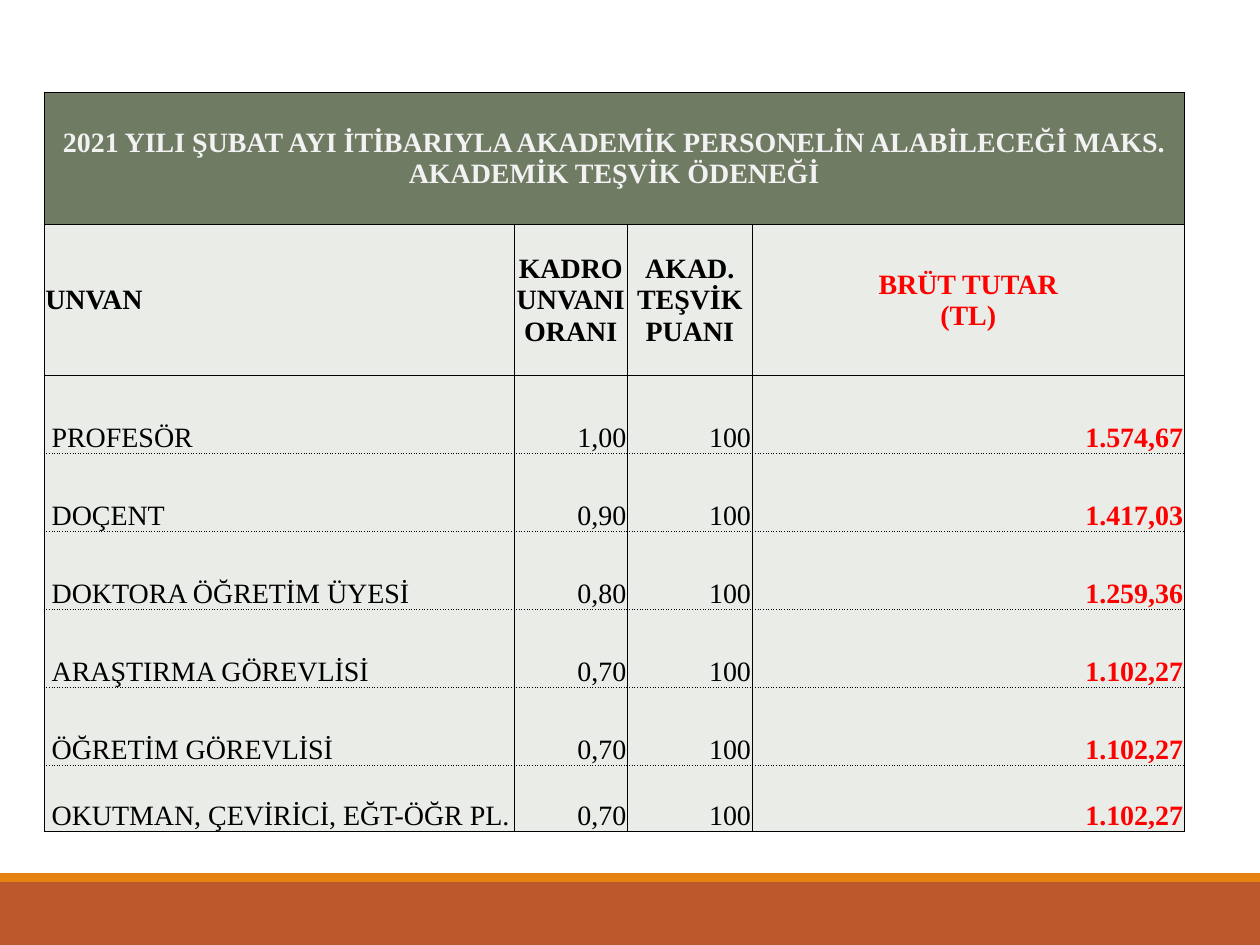
from lxml.etree import SubElement
from pptx import Presentation
from pptx.dml.color import RGBColor
from pptx.enum.shapes import MSO_SHAPE
from pptx.enum.text import MSO_ANCHOR, PP_ALIGN
from pptx.oxml.ns import qn
from pptx.util import Inches, Pt

BLACK, RED, LIGHT, GREEN = "000000", "FF0000", "EAECE7", "6F7B63"
TITLE = ("2021 YILI ŞUBAT AYI İTİBARIYLA AKADEMİK PERSONELİN "
         "ALABİLECEĞİ MAKS. AKADEMİK TEŞVİK ÖDENEĞİ")
HEADINGS = ["UNVAN", "KADRO UNVANI ORANI", "AKAD. TEŞVİK PUANI", "BRÜT TUTAR\n(TL)"]
ALLOWANCES = [
    ("PROFESÖR", "1,00", "100", "1.574,67"),
    ("DOÇENT", "0,90", "100", "1.417,03"),
    ("DOKTORA ÖĞRETİM ÜYESİ", "0,80", "100", "1.259,36"),
    ("ARAŞTIRMA GÖREVLİSİ", "0,70", "100", "1.102,27"),
    ("ÖĞRETİM GÖREVLİSİ", "0,70", "100", "1.102,27"),
    ("OKUTMAN, ÇEVİRİCİ, EĞT-ÖĞR PL.", "0,70", "100", "1.102,27"),
]
COLUMN_WIDTHS = [3.73, 0.9, 0.99, 3.43]
ROW_HEIGHTS = [1.05, 1.2] + [0.62] * 5 + [0.52]


def paint(fill, color):
    fill.solid()
    fill.fore_color.rgb = RGBColor.from_string(color)


def set_borders(cell, top="solid", bottom="solid"):
    """Draw thin black edges; top and bottom name their dash style."""
    properties = cell._tc.get_or_add_tcPr()
    edges = [("a:lnL", "solid"), ("a:lnR", "solid"), ("a:lnT", top), ("a:lnB", bottom)]
    for position, (edge, dash) in enumerate(edges):
        line = properties.makeelement(qn(edge), {"w": str(Pt(0.5))})
        properties.insert(position, line)
        ink = SubElement(line, qn("a:solidFill"))
        SubElement(ink, qn("a:srgbClr"), val=BLACK)
        SubElement(line, qn("a:prstDash"), val=dash)


def write_cell(cell, text, align, color=BLACK, bold=True, fill=LIGHT,
               anchor=MSO_ANCHOR.MIDDLE, indent=0.01):
    paint(cell.fill, fill)
    cell.vertical_anchor = anchor
    cell.margin_left = Inches(indent)
    cell.margin_top = cell.margin_right = Inches(0.01)
    cell.margin_bottom = 0
    paragraph = cell.text_frame.paragraphs[0]
    paragraph.alignment = align
    for number, part in enumerate(text.split("\n")):
        if number:
            paragraph.add_line_break()
        run = paragraph.add_run()
        run.text = part
        run.font.name = "Times New Roman"
        run.font.size = Pt(16)
        run.font.bold = bold
        run.font.color.rgb = RGBColor.from_string(color)


def add_footer_bands(slide, left, top, width, height):
    edge = 0.07
    for band_top, band_height, color in [(top + edge, height - edge, "BD582C"),
                                         (top, edge, "E48312")]:
        band = slide.shapes.add_shape(MSO_SHAPE.RECTANGLE, Inches(left), Inches(band_top),
                                      Inches(width), Inches(band_height))
        band.shadow.inherit = False
        paint(band.fill, color)
        band.line.fill.background()


def add_allowance_table(slide, left, top):
    table = slide.shapes.add_table(
        len(ROW_HEIGHTS), len(COLUMN_WIDTHS), Inches(left), Inches(top),
        Inches(sum(COLUMN_WIDTHS)), Inches(sum(ROW_HEIGHTS))).table
    table.horz_banding = False
    for column, width in zip(table.columns, COLUMN_WIDTHS):
        column.width = Inches(width)
    for row, height in zip(table.rows, ROW_HEIGHTS):
        row.height = Inches(height)

    title = table.cell(0, 0)
    title.merge(table.cell(0, len(COLUMN_WIDTHS) - 1))
    write_cell(title, TITLE, PP_ALIGN.CENTER, "F2F2F2", fill=GREEN)
    for cell in table.rows[0].cells:
        set_borders(cell)

    amount = len(HEADINGS) - 1
    for column, heading in enumerate(HEADINGS):
        cell = table.cell(1, column)
        write_cell(cell, heading, PP_ALIGN.CENTER if column else PP_ALIGN.LEFT,
                   RED if column == amount else BLACK)
        set_borders(cell)

    last = len(ALLOWANCES) - 1
    for row, allowance in enumerate(ALLOWANCES):
        for column, value in enumerate(allowance):
            cell = table.cell(row + 2, column)
            is_amount = column == amount
            write_cell(cell, value, PP_ALIGN.RIGHT if column else PP_ALIGN.LEFT,
                       RED if is_amount else BLACK, bold=is_amount,
                       anchor=MSO_ANCHOR.BOTTOM, indent=0.01 if column else 0.06)
            set_borders(cell, top="sysDot" if row else "solid",
                        bottom="solid" if row == last else "sysDot")


def main():
    presentation = Presentation()
    presentation.slide_width, presentation.slide_height = Inches(10), Inches(7.5)
    slide = presentation.slides.add_slide(presentation.slide_layouts[6])
    add_footer_bands(slide, 0, 6.93, 10, 0.57)
    add_allowance_table(slide, 0.35, 0.73)
    presentation.save("out.pptx")


if __name__ == "__main__":
    main()
